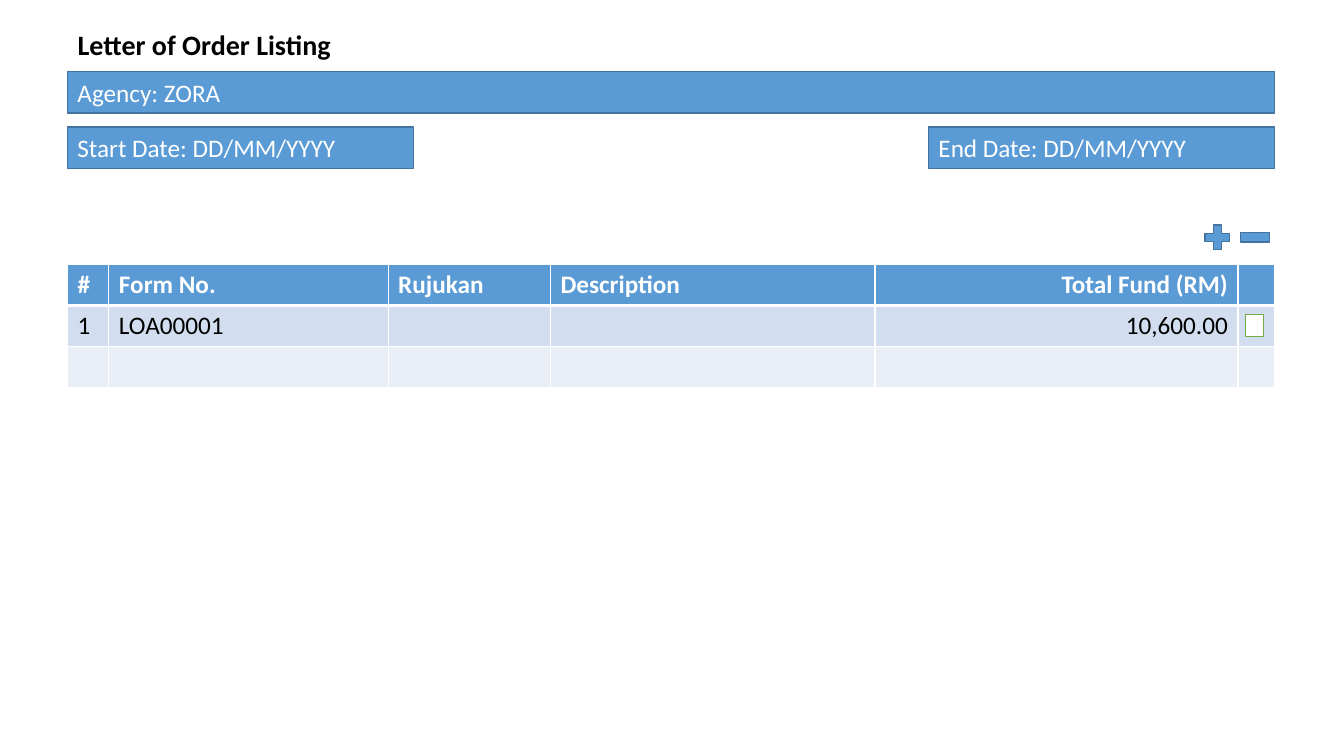
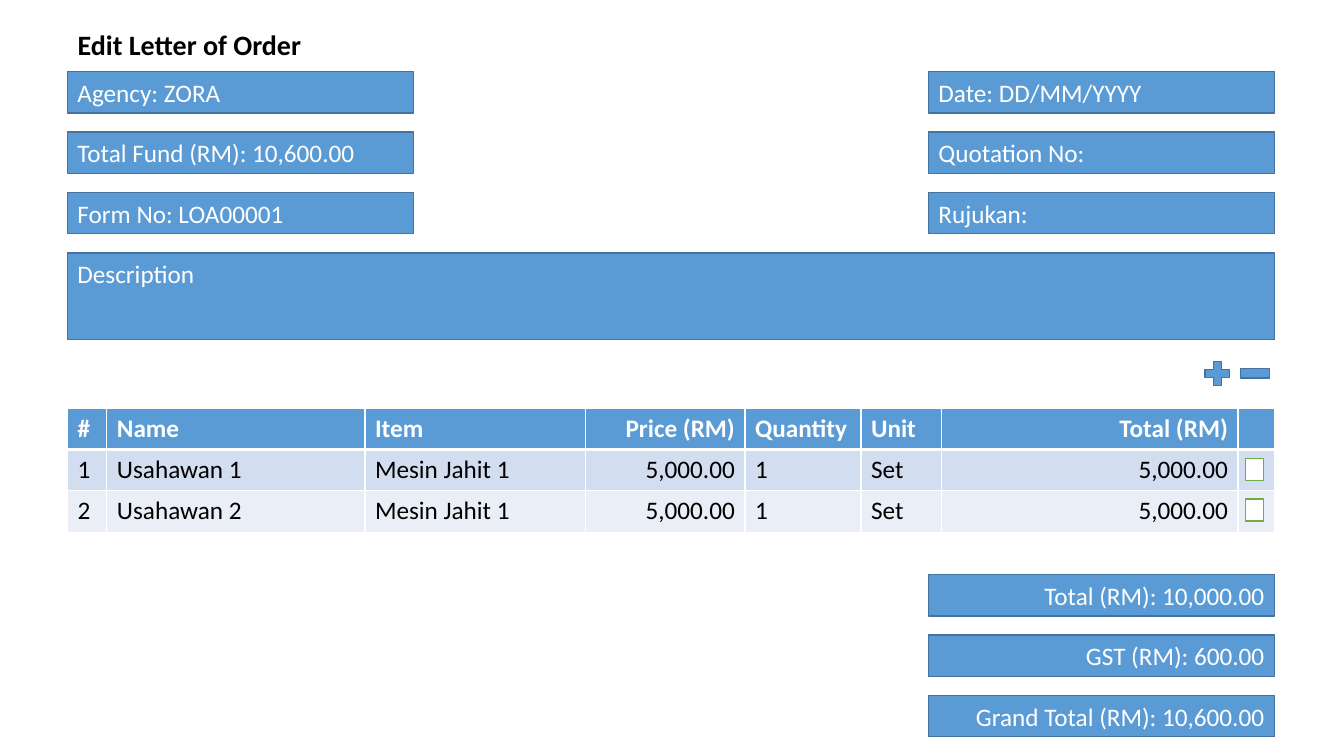
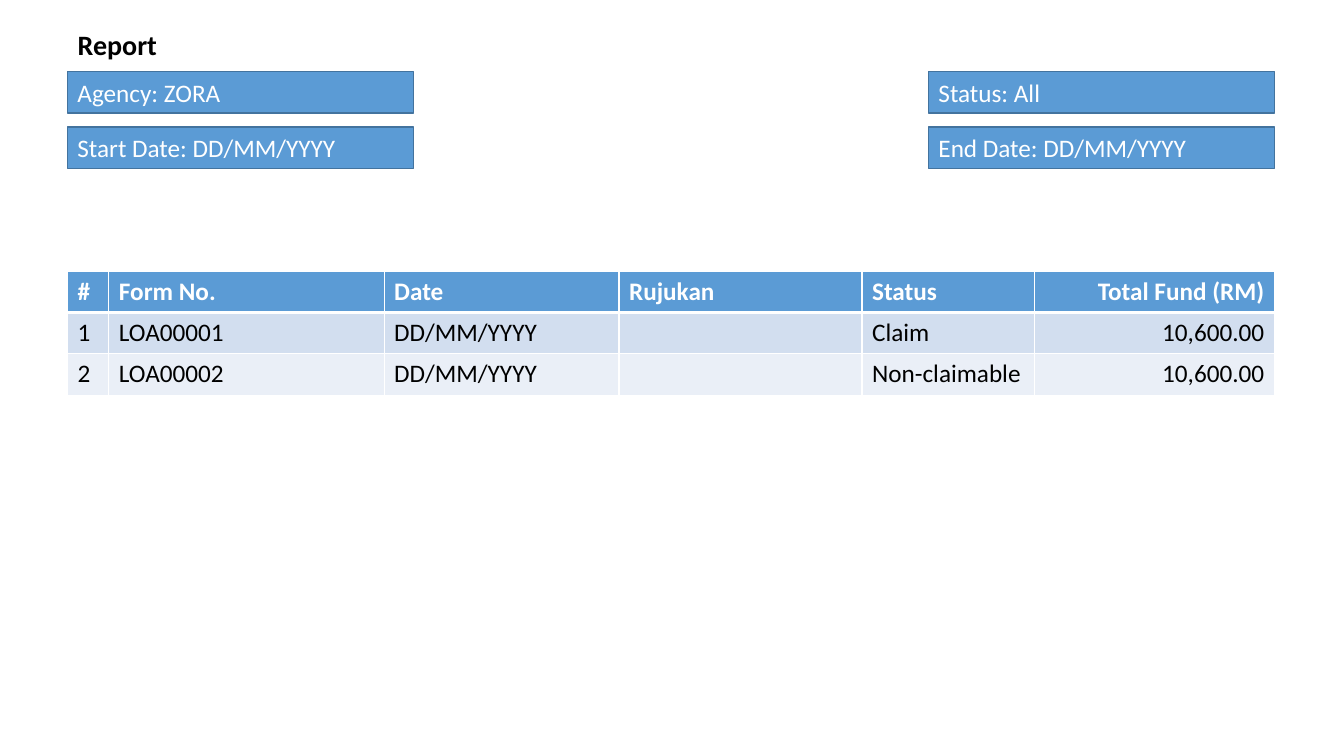
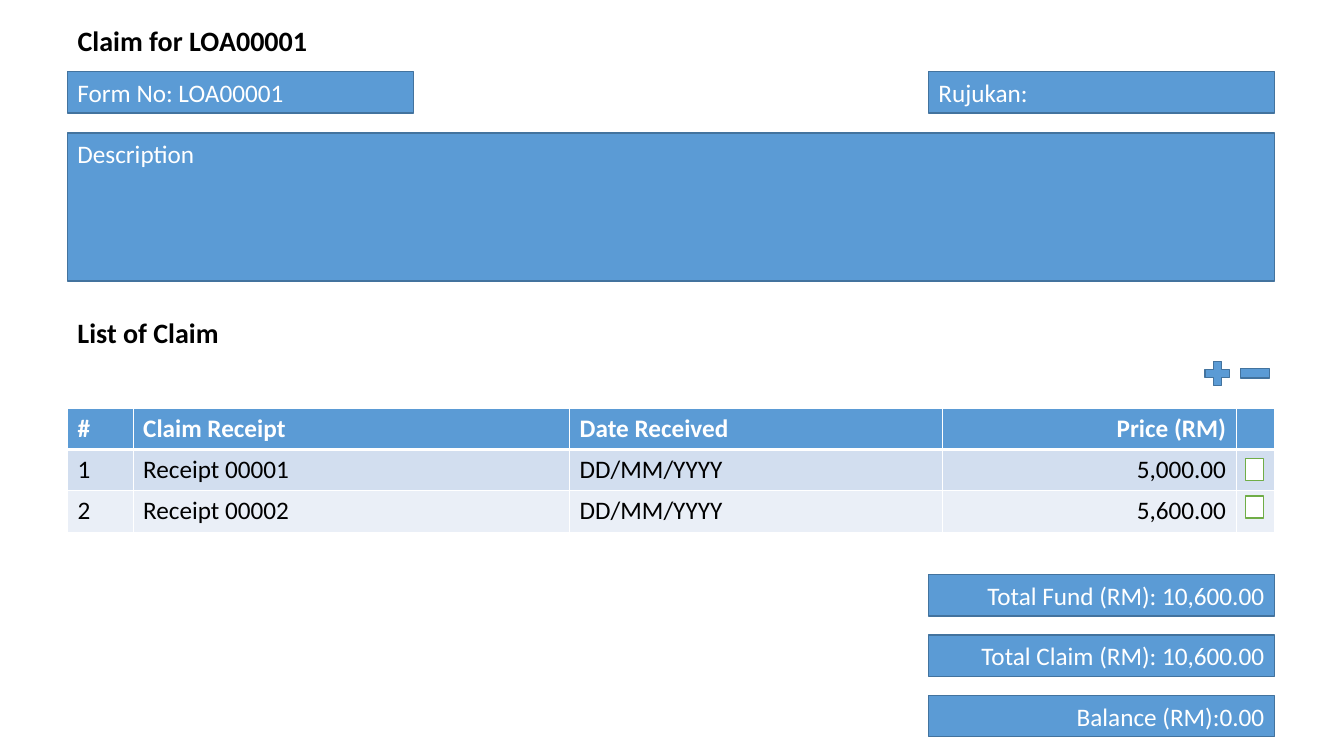
import pptx
import pptx.dml.color
import pptx.enum.shapes
import pptx.enum.text
import pptx.oxml
import pptx.oxml.ns
import pptx.util

SHAPE = pptx.enum.shapes.MSO_SHAPE
ALIGN = pptx.enum.text.PP_ALIGN
ANCHOR = pptx.enum.text.MSO_ANCHOR

FONT = "Calibri"
BLUE, BLUE_EDGE, GREEN = "5B9BD5", "43739E", "70AD47"
WHITE, BLACK = "FFFFFF", "000000"
BANDS = ("D2DEEF", "EAEFF7")

LEFT, FULL_WIDTH = 67, 1197
FIELD_WIDTH, FIELD_HEIGHT = 343, 41
RIGHT = LEFT + FULL_WIDTH - FIELD_WIDTH
FIRST_ROW, TIGHT_PITCH, WIDE_PITCH = 71, 55, 60
TOTALS_TOP = 570
AMOUNT_MARK = "(RM)"


def px(length):
    """Convert px, 100 to the inch, to EMU."""
    return pptx.util.Emu(length * 9144)


def rgb(value):
    return pptx.dml.color.RGBColor.from_string(value)


def style_paragraph(paragraph, size, colour, bold=False, align=ALIGN.LEFT):
    paragraph.alignment = align
    font = paragraph.font
    font.name, font.size, font.bold = FONT, pptx.util.Pt(size), bold
    font.color.rgb = rgb(colour)


def write_heading(heading, text, top, width):
    heading.left, heading.top = px(LEFT), px(top)
    heading.width, heading.height = px(width), px(44)
    frame = heading.text_frame
    frame.text = text
    frame.word_wrap = False
    frame.auto_size = pptx.enum.text.MSO_AUTO_SIZE.NONE
    frame.vertical_anchor = ANCHOR.TOP
    style_paragraph(frame.paragraphs[0], 20, BLACK, bold=True)


def add_titled_slide(deck, title, width, top=22):
    slide = deck.slides.add_slide(deck.slide_layouts.get_by_name("Title Only"))
    write_heading(slide.shapes.title, title, top, width)
    return slide


def add_block(slide, preset, left, top, width, height, fill=BLUE, edge=BLUE_EDGE):
    block = slide.shapes.add_shape(preset, px(left), px(top), px(width), px(height))
    block.shadow.inherit = False
    block.fill.solid()
    block.fill.fore_color.rgb = rgb(fill)
    block.line.color.rgb = rgb(edge)
    block.line.width = pptx.util.Pt(1)
    return block


def add_field(slide, text, left, top, width=FIELD_WIDTH, height=FIELD_HEIGHT,
              align=ALIGN.LEFT, anchor=ANCHOR.MIDDLE):
    frame = add_block(slide, SHAPE.RECTANGLE, left, top, width, height).text_frame
    frame.text = text
    frame.vertical_anchor = anchor
    style_paragraph(frame.paragraphs[0], 18, WHITE, align=align)


def add_field_column(slide, texts, left, pitch, top=FIRST_ROW, align=ALIGN.LEFT):
    for row, text in enumerate(texts):
        add_field(slide, text, left, top + row * pitch, align=align)


def add_totals(slide, texts):
    add_field_column(slide, texts, RIGHT, WIDE_PITCH, TOTALS_TOP, ALIGN.RIGHT)


def add_description(slide, top, height):
    add_field(slide, "Description", LEFT, top, FULL_WIDTH, height, anchor=ANCHOR.TOP)


def add_row_buttons(slide, top):
    """Add the plus and minus signs above a table."""
    add_block(slide, SHAPE.MATH_PLUS, 1191, top, 33, 33)
    add_block(slide, SHAPE.MATH_MINUS, 1225, top - 3, 39, 39)


def add_checkboxes(slide, tops):
    for top in tops:
        add_block(slide, SHAPE.RECTANGLE, 1235, top, 18, 22, WHITE, GREEN)


def set_borders(cell, top, bottom):
    """Draw white cell borders; top and bottom are widths in points."""
    properties = cell._tc.get_or_add_tcPr()
    widths = {"lnL": 1, "lnR": 1, "lnT": top, "lnB": bottom}
    for position, (side, width) in enumerate(widths.items()):
        properties.insert(position, pptx.oxml.parse_xml(
            f'<a:{side} {pptx.oxml.ns.nsdecls("a")} w="{pptx.util.Pt(width)}">'
            f'<a:solidFill><a:srgbClr val="{WHITE}"/></a:solidFill></a:{side}>'))


def add_listing(slide, top, widths, rows):
    """Add a table whose first row is the header; amount columns align right."""
    table = slide.shapes.add_table(
        len(rows), len(widths), px(LEFT), px(top),
        px(FULL_WIDTH), px(FIELD_HEIGHT * len(rows))).table
    for column, width in zip(table.columns, widths):
        column.width = px(width)
    for r, row in enumerate(rows):
        header = r == 0
        for c, text in enumerate(row):
            cell = table.cell(r, c)
            cell.text = text
            cell.fill.solid()
            cell.fill.fore_color.rgb = rgb(BLUE if header else BANDS[(r - 1) % 2])
            set_borders(cell, top=3 if r == 1 else 1, bottom=3 if header else 1)
            style_paragraph(
                cell.text_frame.paragraphs[0], 18, WHITE if header else BLACK, header,
                ALIGN.RIGHT if AMOUNT_MARK in rows[0][c] else ALIGN.LEFT)


def build_order_listing(deck):
    slide = add_titled_slide(deck, "Letter of Order Listing", 274)
    add_field(slide, "Agency: ZORA", LEFT, FIRST_ROW, FULL_WIDTH)
    dates_top = FIRST_ROW + TIGHT_PITCH
    add_field(slide, "Start Date: DD/MM/YYYY", LEFT, dates_top)
    add_field(slide, "End Date: DD/MM/YYYY", RIGHT, dates_top)
    add_row_buttons(slide, 219)
    add_listing(slide, 262, (41, 277, 161, 322, 360, 36), (
        ("#", "Form No.", "Rujukan", "Description", "Total Fund (RM)", ""),
        ("1", "LOA00001", "", "", "10,600.00", ""),
        ("",) * 6))
    add_checkboxes(slide, (312,))


def build_order_form(deck):
    slide = add_titled_slide(deck, "Edit Letter of Order", 245)
    add_field_column(slide, ("Agency: ZORA", "Total Fund (RM): 10,600.00",
                             "Form No: LOA00001"), LEFT, WIDE_PITCH)
    add_field_column(slide, ("Date: DD/MM/YYYY", "Quotation No:", "Rujukan:"),
                     RIGHT, WIDE_PITCH)
    add_description(slide, FIRST_ROW + 3 * WIDE_PITCH, 86)
    add_row_buttons(slide, 354)
    add_listing(slide, 405, (39, 256, 219, 158, 115, 80, 294, 36), (
        ("#", "Name", "Item", "Price (RM)", "Quantity", "Unit", "Total (RM)", ""),
        ("1", "Usahawan 1", "Mesin Jahit 1", "5,000.00", "1", "Set", "5,000.00", ""),
        ("2", "Usahawan 2", "Mesin Jahit 1", "5,000.00", "1", "Set", "5,000.00", "")))
    add_checkboxes(slide, (455, 495))
    add_totals(slide, ("Total (RM): 10,000.00", "GST (RM): 600.00",
                       "Grand Total (RM): 10,600.00"))


def build_report(deck):
    slide = add_titled_slide(deck, "Report", 100)
    add_field_column(slide, ("Agency: ZORA", "Start Date: DD/MM/YYYY"),
                     LEFT, TIGHT_PITCH)
    add_field_column(slide, ("Status: All", "End Date: DD/MM/YYYY"),
                     RIGHT, TIGHT_PITCH)
    add_listing(slide, 269, (41, 273, 233, 241, 171, 238), (
        ("#", "Form No.", "Date", "Rujukan", "Status", "Total Fund (RM)"),
        ("1", "LOA00001", "DD/MM/YYYY", "", "Claim", "10,600.00"),
        ("2", "LOA00002", "DD/MM/YYYY", "", "Non-claimable", "10,600.00")))


def build_claim(deck):
    slide = add_titled_slide(deck, "Claim for LOA00001", 250, top=18)
    add_field(slide, "Form No: LOA00001", LEFT, FIRST_ROW)
    add_field(slide, "Rujukan:", RIGHT, FIRST_ROW)
    add_description(slide, 132, 147)
    subheading = slide.shapes.add_textbox(0, 0, 0, 0)
    write_heading(subheading, "List of Claim", 308, 161)
    add_row_buttons(slide, 354)
    add_listing(slide, 405, (65, 433, 370, 291, 38), (
        ("#", "Claim Receipt", "Date Received", "Price (RM)", ""),
        ("1", "Receipt 00001", "DD/MM/YYYY", "5,000.00", ""),
        ("2", "Receipt 00002", "DD/MM/YYYY", "5,600.00", "")))
    add_checkboxes(slide, (455, 492))
    add_totals(slide, ("Total Fund (RM): 10,600.00", "Total Claim (RM): 10,600.00",
                       "Balance (RM):0.00"))


def main():
    deck = pptx.Presentation()
    deck.slide_width, deck.slide_height = px(1333), px(750)
    build_order_listing(deck)
    build_order_form(deck)
    build_report(deck)
    build_claim(deck)
    deck.save("out.pptx")


if __name__ == "__main__":
    main()
